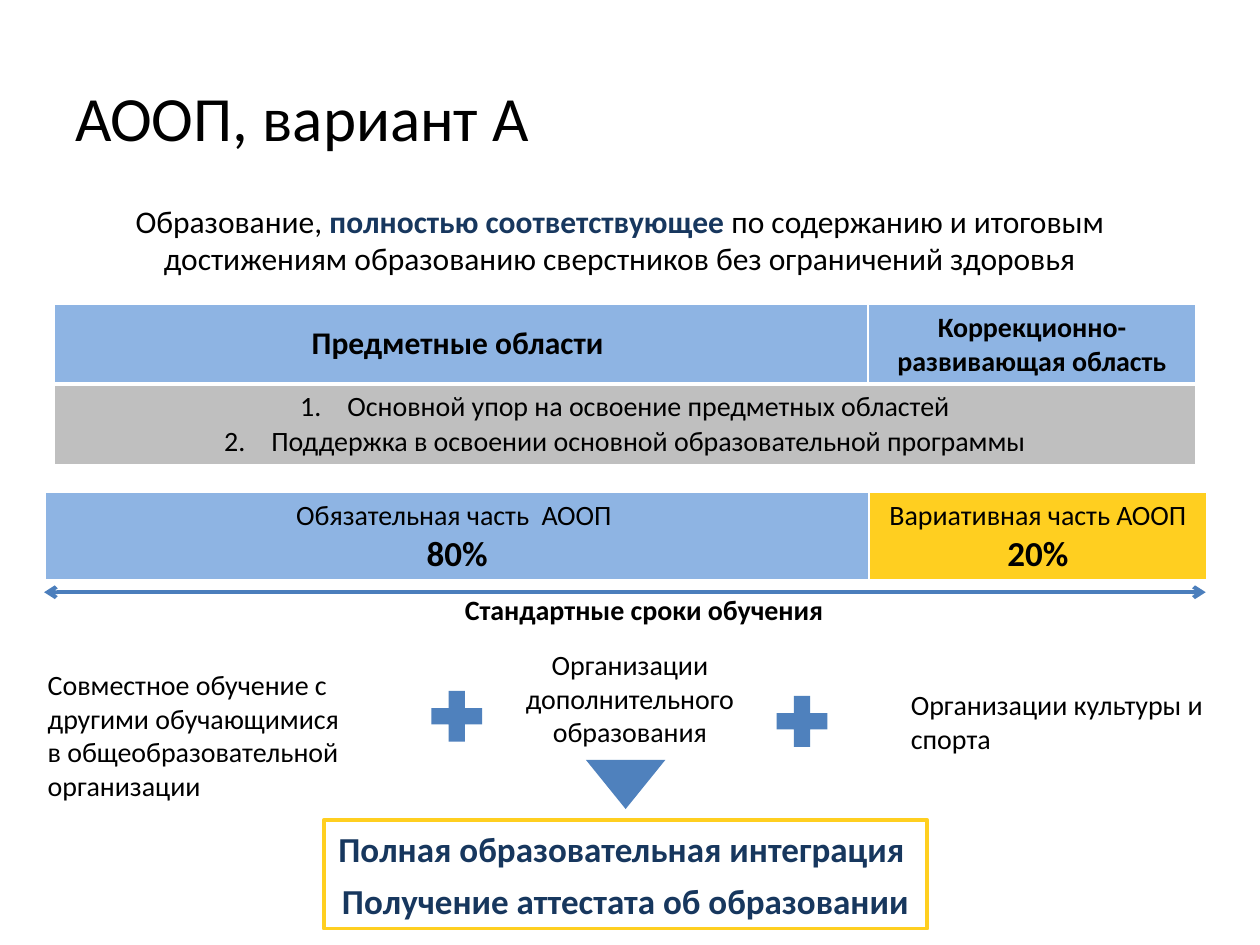
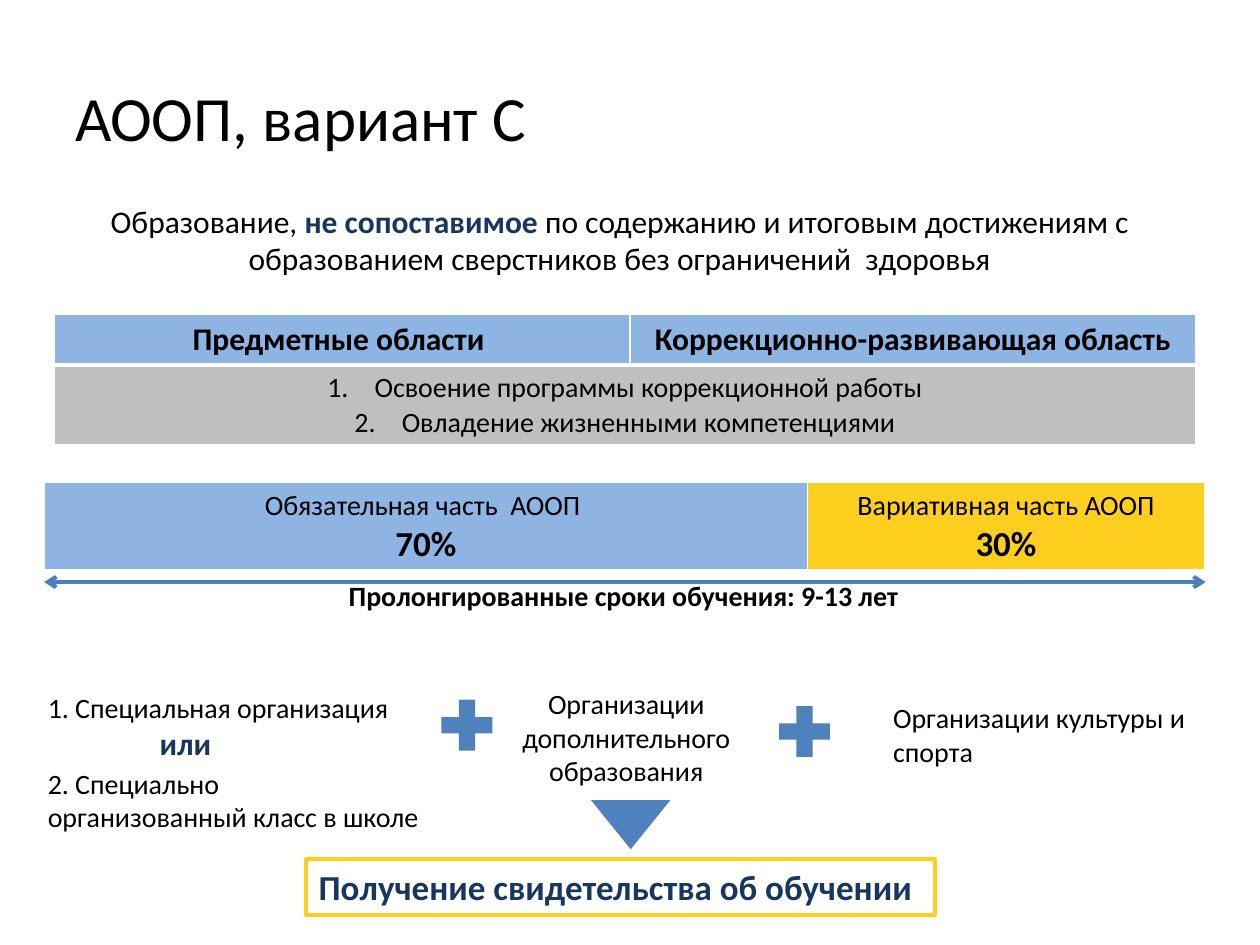
import dataclasses

import pptx
import pptx.dml.color
import pptx.enum.shapes
import pptx.enum.text
import pptx.oxml.ns
import pptx.util
from lxml import etree

Pt = pptx.util.Pt
SHAPE = pptx.enum.shapes.MSO_SHAPE
ALIGN = pptx.enum.text.PP_ALIGN
ANCHOR = pptx.enum.text.MSO_ANCHOR


def rgb(code):
    return pptx.dml.color.RGBColor.from_string(code)


@dataclasses.dataclass(frozen=True)
class Theme:
    font: str = "Calibri"
    black: str = "000000"
    white: str = "FFFFFF"
    navy: str = "17375E"
    blue: str = "4F81BD"
    arrow: str = "4B7EBC"
    pale_blue: str = "8EB4E3"
    yellow: str = "FFCF20"
    grey: str = "BFBFBF"
    title: int = 36
    strong: int = 20
    lead: int = 18
    body: int = 16
    rule: float = 2.25
    plus_size: float = 39.6

    def style(self, name):
        """Return the font format of a named text style."""
        size, bold, colour = {
            "title": (self.title, False, self.black),
            "lead": (self.lead, False, self.black),
            "lead key": (self.lead, True, self.navy),
            "header": (self.lead, True, self.black),
            "body": (self.body, False, self.black),
            "body bold": (self.body, True, self.black),
            "share": (self.strong, True, self.black),
            "result": (self.strong, True, self.navy),
        }[name]
        return {"name": self.font, "size": Pt(size), "bold": bold}, colour


THEME = Theme()


def set_format(target, values):
    for name, value in values.items():
        setattr(target, name, value)


def write(frame, paras, align=ALIGN.LEFT, before=0, numbered=False):
    """Fill a frame; each paragraph is a list of (text, style) spans."""
    for number, spans in enumerate(paras):
        para = frame.add_paragraph() if number else frame.paragraphs[0]
        set_format(para, {"alignment": align, "space_before": Pt(before)})
        for text, style in spans:
            span = para.add_run()
            span.text = text
            values, colour = THEME.style(style)
            set_format(span.font, values)
            span.font.color.rgb = rgb(colour)
        if numbered:
            props = para._p.get_or_add_pPr()
            props.set("marL", str(Pt(27)))
            props.set("indent", str(-Pt(27)))
            bullet = etree.SubElement(props, pptx.oxml.ns.qn("a:buAutoNum"))
            bullet.set("type", "arabicPeriod")


def add_text(page, place, paras, align=ALIGN.LEFT, before=0, wrap=True,
             anchor=ANCHOR.TOP):
    box = page.shapes.add_textbox(*map(Pt, place))
    set_format(box.text_frame, {"word_wrap": wrap, "vertical_anchor": anchor})
    write(box.text_frame, paras, align, before)


def add_solid(page, kind, place, rotation=0):
    shape = page.shapes.add_shape(kind, *map(Pt, place))
    shape.shadow.inherit = False
    shape.fill.solid()
    shape.fill.fore_color.rgb = rgb(THEME.blue)
    shape.line.fill.background()
    shape.rotation = rotation


def add_plus(page, left, top):
    add_solid(page, SHAPE.MATH_PLUS, (left, top, THEME.plus_size, THEME.plus_size))


def add_result(page, place, lines, align):
    """Add the framed outcome at the foot of the page."""
    box = page.shapes.add_shape(SHAPE.RECTANGLE, *map(Pt, place))
    box.shadow.inherit = False
    box.fill.background()
    box.line.color.rgb = rgb(THEME.yellow)
    box.line.width = Pt(THEME.rule)
    box.text_frame.word_wrap = False
    write(box.text_frame, [[(line, "result")] for line in lines], align, before=6)


def add_duration_arrow(page, top):
    line = page.shapes.add_connector(
        pptx.enum.shapes.MSO_CONNECTOR.STRAIGHT, Pt(25.2), Pt(top), Pt(689), Pt(top))
    line.line.color.rgb = rgb(THEME.arrow)
    line.line.width = Pt(THEME.rule)
    for end in ("a:headEnd", "a:tailEnd"):
        tip = etree.SubElement(line.line._get_or_add_ln(), pptx.oxml.ns.qn(end))
        tip.set("type", "arrow")
    etree.SubElement(line._element.spPr, pptx.oxml.ns.qn("a:effectLst"))


def set_borders(cell, top, bottom):
    """Draw white cell borders; the side ones are 1 pt wide."""
    props = cell._tc.get_or_add_tcPr()
    sides = {"a:lnL": 1, "a:lnR": 1, "a:lnT": top, "a:lnB": bottom}
    for position, (side, width) in enumerate(sides.items()):
        border = etree.Element(pptx.oxml.ns.qn(side), w=str(Pt(width)))
        fill = etree.SubElement(border, pptx.oxml.ns.qn("a:solidFill"))
        etree.SubElement(fill, pptx.oxml.ns.qn("a:srgbClr"), val=THEME.white)
        props.insert(position, border)


def add_table(page, left, top, widths, heights):
    place = (left, top, sum(widths), sum(heights))
    table = page.shapes.add_table(len(heights), len(widths), *map(Pt, place)).table
    set_format(table, {"first_row": False, "horz_banding": False})
    for column, width in zip(table.columns, widths):
        column.width = Pt(width)
    for number, (row, height) in enumerate(zip(table.rows, heights)):
        row.height = Pt(height)
        for cell in row.cells:
            set_borders(cell, 3 if number else 1, 1 if number else 3)
    return table


def fill_cell(cell, colour, paras, anchor=ANCHOR.TOP, numbered=False):
    cell.fill.solid()
    cell.fill.fore_color.rgb = rgb(colour)
    cell.vertical_anchor = anchor
    write(cell.text_frame, paras, ALIGN.CENTER, numbered=numbered)


def add_areas_table(page, top, widths, heights, correction_style, aims):
    table = add_table(page, 31, top, widths, heights)
    headers = (("Предметные области ", "header"),
               ("Коррекционно-развивающая область", correction_style))
    for column, header in enumerate(headers):
        fill_cell(table.cell(0, column), THEME.pale_blue, [[header]], ANCHOR.MIDDLE)
    table.cell(1, 0).merge(table.cell(1, 1))
    fill_cell(table.cell(1, 0), THEME.grey, [[(aim, "body")] for aim in aims],
              numbered=True)


def add_shares_table(page, left, top, widths, shares):
    table = add_table(page, left, top, widths, [50.4])
    names = ("Обязательная часть  АООП ", "Вариативная часть АООП")
    colours = (THEME.pale_blue, THEME.yellow)
    for cell, name, share, colour in zip(table.rows[0].cells, names, shares, colours):
        fill_cell(cell, colour, [[(name, "body")], [(share, "share")]])


def add_heading(page, title, before, key, after):
    add_text(page, (36, 21.6, 648, 90), [[(title, "title")]], anchor=ANCHOR.MIDDLE)
    add_text(page, (48.2, 111.6, 612, 51),
             [[(before, "lead"), (key, "lead key"), (after, "lead")]],
             ALIGN.CENTER, before=6)


def add_duration(page, arrow_top, place, text):
    add_duration_arrow(page, arrow_top)
    add_text(page, place, [[(text, "body bold")]], wrap=False)


def add_partners(page, extra_place, culture_place, pluses, triangle):
    """Add the two partner organisations, their plus signs and the pointer below."""
    add_text(page, extra_place,
             [[("Организации дополнительного образования", "body")]], ALIGN.CENTER)
    add_text(page, culture_place, [[("Организации культуры и спорта", "body")]])
    for left, top in pluses:
        add_plus(page, left, top)
    add_solid(page, SHAPE.ISOSCELES_TRIANGLE, (*triangle, 45.4, 28.1), 180)


def build_variant_a(page):
    add_heading(page, "АООП, вариант А", "Образование, ", "полностью соответствующее ",
                "по содержанию и итоговым достижениям образованию сверстников "
                "без ограничений здоровья")
    add_areas_table(page, 173.8, (465.1, 187.2), (45.4, 46.1), "body bold",
                    ("Основной упор на освоение предметных областей",
                     "Поддержка в освоении основной образовательной программы"))
    add_shares_table(page, 25.9, 281.5, (470.7, 193), ("80%", "20%"))
    add_duration(page, 338.4, (258.5, 334.8, 222.5, 26.6), "Стандартные сроки обучения")
    add_text(page, (20.2, 378, 187.2, 85),
             [[("Совместное обучение с другими обучающимися "
                "в общеобразовательной организации", "body")]])
    add_partners(page, (275, 366.5, 170, 65.5), (513.4, 389.5, 190, 46),
                 ((241.2, 389.5), (438.5, 392.4)), (334.8, 434.2))
    add_result(page, (185, 468.7, 344.9, 61.9),
               ("Полная образовательная интеграция ",
                "Получение аттестата об образовании"), ALIGN.CENTER)


def build_variant_c(page):
    add_heading(page, "АООП, вариант C", "Образование, ", "не сопоставимое ",
                "по содержанию и итоговым достижениям с образованием сверстников "
                "без ограничений  здоровья")
    add_areas_table(page, 179.3, (329, 323.3), (29.2, 45), "header",
                    ("Освоение программы коррекционной работы",
                     "Овладение жизненными компетенциями"))
    add_shares_table(page, 25.2, 275.8, (436.3, 226.8), ("70%", "30%"))
    add_duration(page, 332.6, (192.2, 326.9, 332.6, 26.6),
                 "Пролонгированные сроки обучения: 9-13 лет")
    add_text(page, (20.2, 391, 226.8, 26.6), [[("1. Специальная организация", "body")]])
    add_text(page, (84.2, 410.4, 60.5, 28.8), [[("или", "lead key")]])
    add_text(page, (20.2, 434.2, 226.8, 46),
             [[("2. Специально организованный класс в школе", "body")]], before=6)
    add_partners(page, (272.9, 388.8, 170, 65.5), (503.3, 396.7, 201.6, 46),
                 ((247, 394.6), (439.9, 398.2)), (337.7, 457.2))
    add_result(page, (175, 491, 359.3, 31.7),
               ("Получение свидетельства об обучении",), ALIGN.LEFT)


def main():
    deck = pptx.Presentation()
    set_format(deck, {"slide_width": Pt(720), "slide_height": Pt(540)})
    for build in (build_variant_a, build_variant_c):
        build(deck.slides.add_slide(deck.slide_layouts[6]))
    deck.save("out.pptx")


if __name__ == "__main__":
    main()
